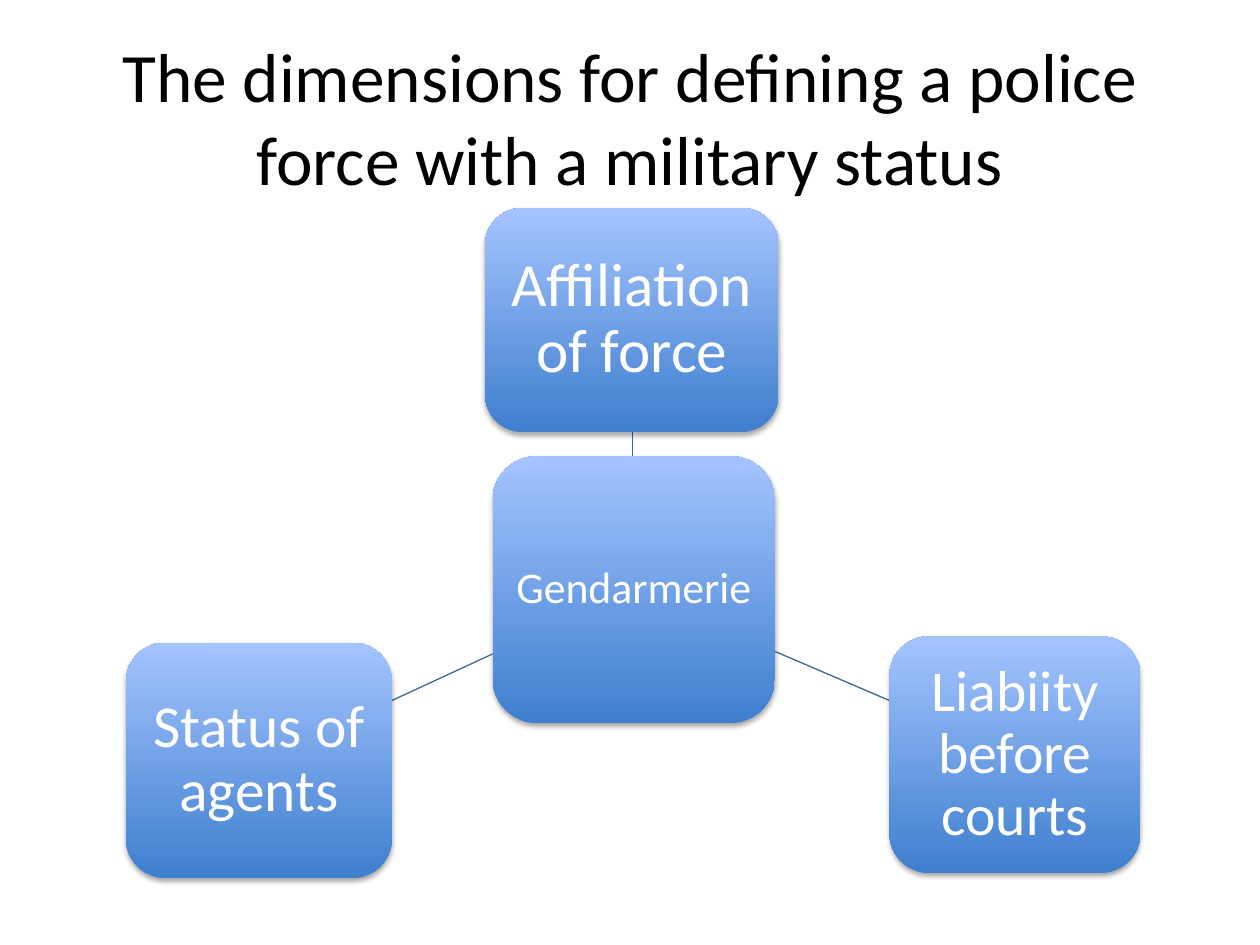
from lxml import etree
from pptx import Presentation
from pptx.dml.color import RGBColor
from pptx.enum.shapes import MSO_CONNECTOR, MSO_SHAPE
from pptx.enum.text import MSO_ANCHOR, PP_ALIGN
from pptx.oxml import parse_xml
from pptx.oxml.ns import qn
from pptx.util import Inches, Pt

COLORS = {
    "title": "000000",
    "label": "FFFFFF",
    "line": "3F6797",
    "bottom": "3F7FCE",
    "top": "A4C4FF",
    "shadow": "000000",
}
FONT = "Calibri"

# label, box (left, top, width, height), text size, inset
CENTER = ("Gendarmerie", (3.91, 3.62, 2.24, 2.12), 25, 0.07)
DIMENSIONS = [
    ("Affiliation of force", (3.85, 1.65, 2.33, 1.78), 35, 0.1),
    ("Liabiity before courts", (7.06, 5.05, 1.99, 1.88), 33, 0.09),
    ("Status of agents", (1, 5.1, 2.11, 1.87), 34, 0.09),
]
# start and end on the edges of the boxes
SPOKES = [
    ((5.02, 3.62), (5.02, 3.42)),
    ((6.15, 5.17), (7.06, 5.56)),
    ((3.91, 5.19), (3.11, 5.56)),
]


def color(name):
    return RGBColor.from_string(COLORS[name])


def write(shape, text, *, size, fill, inset=None, spacing=None):
    """Fill a shape with one centred paragraph."""
    frame = shape.text_frame
    frame.word_wrap = True
    frame.vertical_anchor = MSO_ANCHOR.MIDDLE
    if inset is not None:
        frame.margin_left = frame.margin_right = Inches(inset)
        frame.margin_top = frame.margin_bottom = Inches(inset)
    para = frame.paragraphs[0]
    para.alignment = PP_ALIGN.CENTER
    para.line_spacing = spacing
    span = para.add_run()
    span.text = text
    span.font.name = FONT
    span.font.size = Pt(size)
    span.font.color.rgb = color(fill)


def add_shadow(shape):
    shape.shadow.inherit = False
    effects = shape.fill._xPr.find(qn("a:effectLst"))
    effects.append(parse_xml(
        '<a:outerShdw xmlns:a="http://schemas.openxmlformats.org/drawingml/2006/main"'
        f' blurRad="{Pt(3.1)}" dist="{Pt(1.8)}" dir="5400000" rotWithShape="0">'
        f'<a:srgbClr val="{COLORS["shadow"]}"><a:alpha val="35000"/></a:srgbClr>'
        '</a:outerShdw>'))


def add_title(page, box, text):
    title = page.shapes.add_textbox(*map(Inches, box))
    write(title, text, size=39.6, fill="title")


def add_node(page, label, box, size, inset):
    node = page.shapes.add_shape(MSO_SHAPE.ROUNDED_RECTANGLE, *map(Inches, box))
    node.fill.gradient()
    node.fill.gradient_angle = 90
    for stop, name in zip(node.fill.gradient_stops, ("bottom", "top")):
        stop.color.rgb = color(name)
    node.line.fill.background()
    add_shadow(node)
    write(node, label, size=size, fill="label", inset=inset, spacing=0.9)


def add_spoke(page, start, end):
    spoke = page.shapes.add_connector(
        MSO_CONNECTOR.STRAIGHT, *map(Inches, start + end))
    spoke.line.color.rgb = color("line")
    spoke.line.width = Pt(0.75)
    etree.SubElement(spoke._element.spPr, qn("a:effectLst"))


def add_radial_diagram(page):
    add_node(page, *CENTER)
    for spoke, dimension in zip(SPOKES, DIMENSIONS):
        add_spoke(page, *spoke)
        add_node(page, *dimension)


def main():
    deck = Presentation()
    deck.slide_width, deck.slide_height = Inches(10), Inches(7.5)
    page = deck.slides.add_slide(deck.slide_layouts[6])
    add_title(page, (0.5, 0.3, 9, 1.25),
              "The dimensions for defining a police force with a military status")
    add_radial_diagram(page)
    deck.save("out.pptx")


if __name__ == "__main__":
    main()
